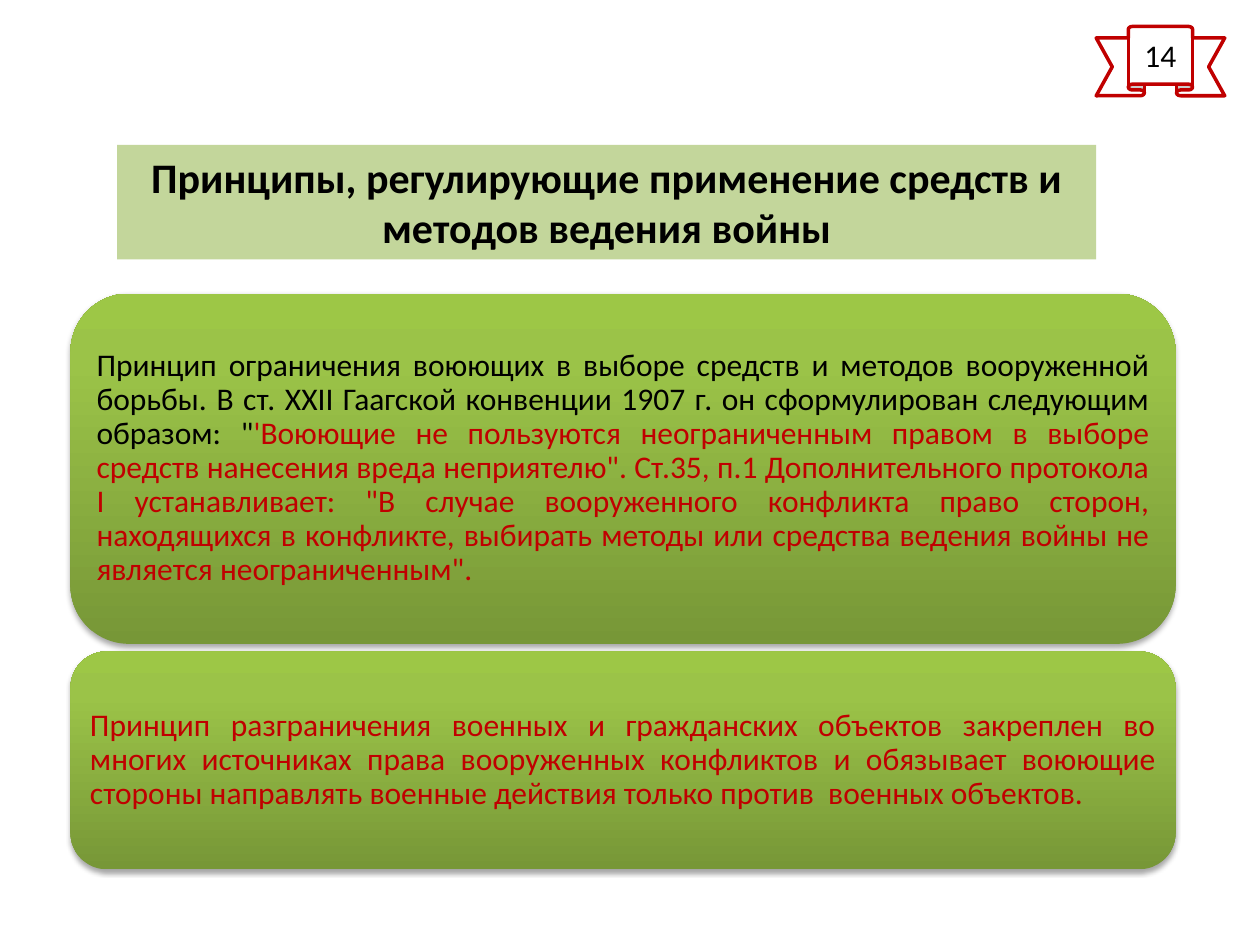
from pptx import Presentation
from pptx.dml.color import RGBColor
from pptx.enum.shapes import MSO_SHAPE
from pptx.enum.text import MSO_ANCHOR, PP_ALIGN
from pptx.oxml import parse_xml
from pptx.oxml.ns import nsdecls, qn
from pptx.util import Inches, Pt

RECT, ROUND, RIBBON = MSO_SHAPE.RECTANGLE, MSO_SHAPE.ROUNDED_RECTANGLE, MSO_SHAPE.UP_RIBBON
TOP, MIDDLE = MSO_ANCHOR.TOP, MSO_ANCHOR.MIDDLE
CENTER, JUSTIFY = PP_ALIGN.CENTER, PP_ALIGN.JUSTIFY

BLACK, RED, WHITE, PALE = "000000", "C00000", "FFFFFF", "C3D69B"
STOPS = [(0, "779737"), (80, "9BC348"), (100, "9DC746")]
FONT = "Calibri"

NUMBER = [("14", BLACK)]
TITLE = [("Принципы, регулирующие применение средств и методов ведения войны", BLACK)]
# top, height, text runs
CARDS = [
    (2.33, 2.78, [
        ("Принцип ограничения воюющих в выборе средств и методов вооруженной борьбы. "
         "В ст. ХХII Гаагской конвенции 1907 г. он сформулирован следующим образом: \"", BLACK),
        ("'Воюющие не пользуются неограниченным правом в выборе средств нанесения вреда "
         "неприятелю\". Ст.35, п.1 Дополнительного протокола I устанавливает: \"В случае "
         "вооруженного конфликта право сторон, находящихся в конфликте, выбирать методы или "
         "средства ведения войны не является неограниченным\".", RED)]),
    (5.17, 1.73, [
        ("Принцип разграничения военных и гражданских объектов закреплен во многих источниках "
         "права вооруженных конфликтов и обязывает воюющие стороны направлять военные действия "
         "только против  военных объектов.", RED)]),
]
CARD_LEFT, CARD_WIDTH = 0.56, 8.77
CORNER = 0.167 * 0.293  # text inset of a rounded corner, as a share of height
PAD = dict.fromkeys(["margin_left", "margin_right", "margin_top", "margin_bottom"], Inches(0.07))
BODY = {"alignment": JUSTIFY, "line_spacing": 0.9, "space_after": Pt(6.3)}


def color(code):
    return RGBColor.from_string(code)


def put(item, values):
    for name, value in values.items():
        setattr(item, name, value)


def write(shape, runs, size, bold=False, frame={}, para={}):
    box = shape.text_frame
    put(box, {"word_wrap": True, "vertical_anchor": MIDDLE, **frame})
    line = box.paragraphs[0]
    put(line, {"alignment": CENTER, **para})
    for text, code in runs:
        run = line.add_run()
        run.text = text
        put(run.font, {"name": FONT, "size": Pt(size), "bold": bold})
        run.font.color.rgb = color(code)


def add(kind, area, fill=None, edge=None):
    shape = slide.shapes.add_shape(kind, *map(Inches, area))
    shape.shadow.inherit = False
    if fill:
        shape.fill.solid()
        shape.fill.fore_color.rgb = color(fill)
    if edge:
        shape.line.color.rgb = color(edge)
        shape.line.width = Pt(2)
    else:
        shape.line.fill.background()
    return shape


def shade(shape):
    """Give the shape its upward gradient and soft drop shadow."""
    shape.fill.gradient()
    shape.fill.gradient_angle = 90
    props = shape.fill._xPr
    stops = props.find(".//" + qn("a:gsLst"))
    stops.clear()
    for place, code in STOPS:
        stops.append(parse_xml(f'<a:gs {nsdecls("a")} pos="{place * 1000}">'
                               f'<a:srgbClr val="{code}"/></a:gs>'))
    props.find(qn("a:effectLst")).append(parse_xml(
        f'<a:outerShdw {nsdecls("a")} blurRad="{Pt(3.1)}" dist="{Pt(1.8)}" dir="5400000" '
        f'rotWithShape="0"><a:srgbClr val="{BLACK}"><a:alpha val="35000"/></a:srgbClr>'
        '</a:outerShdw>'))


deck = Presentation()
put(deck, {"slide_width": Inches(10), "slide_height": Inches(7.5)})
slide = deck.slides.add_slide(deck.slide_layouts[6])

write(add(RIBBON, (8.7, 0.21, 1.02, 0.55), WHITE, RED), NUMBER, 18)
write(add(RECT, (0.93, 1.15, 7.77, 0.91), PALE), TITLE, 24, True, {"vertical_anchor": TOP})

for top, height, runs in CARDS:
    shade(add(ROUND, (CARD_LEFT, top, CARD_WIDTH, height)))
    gap = height * CORNER
    area = (CARD_LEFT + gap, top + gap, CARD_WIDTH - 2 * gap, height - 2 * gap)
    write(slide.shapes.add_textbox(*map(Inches, area)), runs, 18, frame=PAD, para=BODY)

deck.save("out.pptx")
